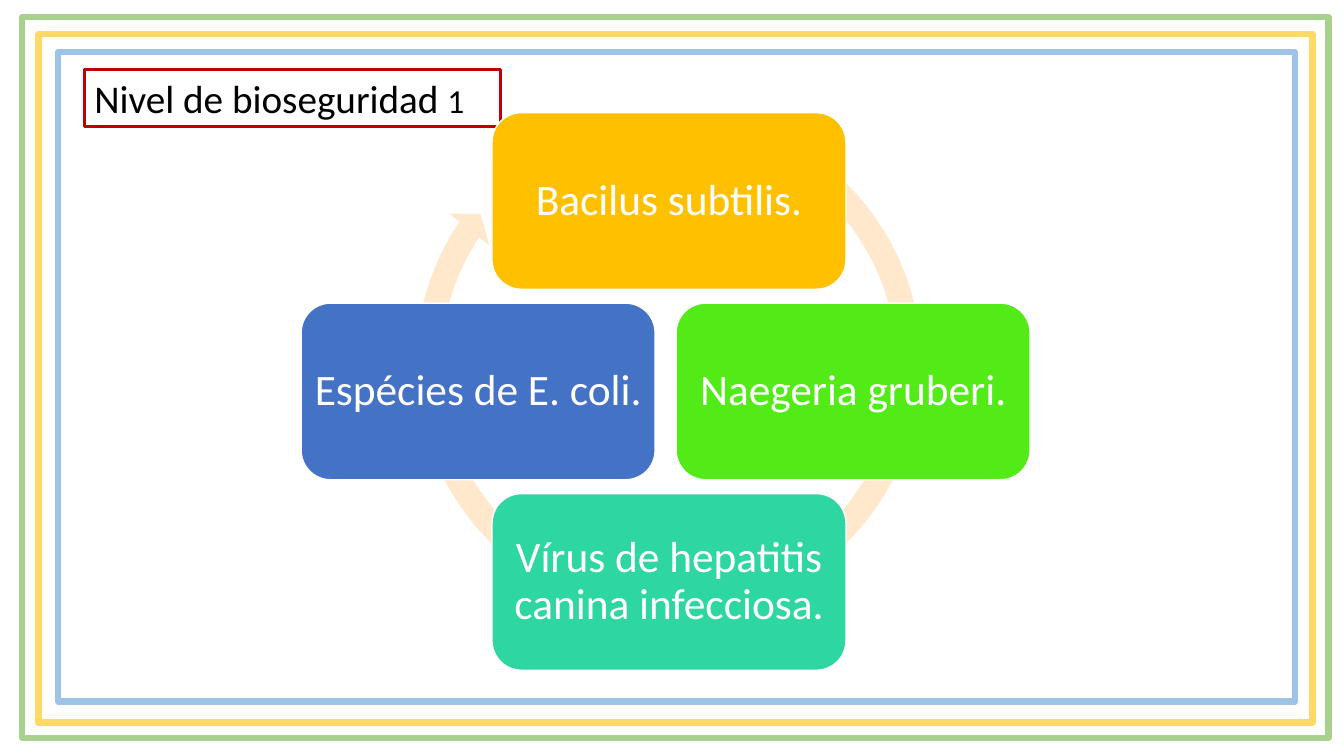
"""Build the biosafety level 1 slide: a cycle of four example organisms."""
from lxml import etree
from pptx import Presentation
from pptx import util as u
from pptx.dml.color import RGBColor
from pptx.enum import shapes, text

COLORS = {
    "outer": "A9D18E", "middle": "FFD966", "inner": "9DC3E6",
    "title_border": "C00000", "black": "000000", "white": "FFFFFF",
    "cycle": "FFE8CC", "amber": "FFC000", "green": "53EB17",
    "teal": "2ED7A1", "blue": "4472C4",
}


def add_block(kind, box, fill=None, line=None, line_width=1):
    """Add a preset shape with the given box in centimetres."""
    block = slide.shapes.add_shape(kind, *[u.Cm(length) for length in box])
    block.shadow.inherit = False
    if fill:
        block.fill.solid()
        block.fill.fore_color.rgb = RGBColor.from_string(COLORS[fill])
    else:
        block.fill.background()
    if line:
        block.line.color.rgb = RGBColor.from_string(COLORS[line])
        block.line.width = u.Pt(line_width)
    else:
        block.line.fill.background()
    return block


def style_font(paragraph, size, color):
    """Set the font shared by all runs of a paragraph."""
    paragraph.font.name = "Calibri"
    paragraph.font.size = u.Pt(size)
    paragraph.font.color.rgb = RGBColor.from_string(COLORS[color])


deck = Presentation()
deck.slide_width, deck.slide_height = u.Cm(33.87), u.Cm(19.05)
slide = deck.slides.add_slide(deck.slide_layouts[6])

frames = [
    ("outer", (0.56, 0.43, 32.92, 18.16)),
    ("middle", (0.97, 0.86, 32.11, 17.35)),
    ("inner", (1.47, 1.32, 31.17, 16.36)),
]
for color, box in frames:
    add_block(shapes.MSO_SHAPE.RECTANGLE, box, line=color, line_width=4.5)

title = add_block(shapes.MSO_SHAPE.RECTANGLE, (2.13, 1.75, 10.49, 1.45),
                  line="title_border", line_width=2.25)
title.text_frame.vertical_anchor = text.MSO_ANCHOR.TOP
heading = title.text_frame.paragraphs[0]
heading.alignment = text.PP_ALIGN.LEFT
style_font(heading, 28, "black")
heading.add_run().text = "Nivel de bioseguridad "
level = heading.add_run()
level.text = "1"
level.font.size = u.Pt(24)

cycle = add_block(shapes.MSO_SHAPE.CIRCULAR_ARROW, (10.16, 2.46, 13.39, 13.39), fill="cycle")
for index, value in enumerate((0.047, 2.729, 128.315, 180.308, 0.048)):
    cycle.adjustments[index] = value

CARD_WIDTH, CARD_HEIGHT = 8.92, 4.45
FIRST_TOP, ROW_STEP = 2.84, 4.8
organisms = [
    ("Bacilus subtilis.", 12.4, 0, "amber"),
    ("Naegeria gruberi.", 17.04, 1, "green"),
    ("Vírus de hepatitis canina infecciosa.", 12.4, 2, "teal"),
    ("Espécies de E. coli.", 7.59, 1, "blue"),
]
for name, left, row, color in organisms:
    card = add_block(shapes.MSO_SHAPE.ROUNDED_RECTANGLE,
                     (left, FIRST_TOP + row * ROW_STEP, CARD_WIDTH, CARD_HEIGHT),
                     fill=color, line="white")
    frame = card.text_frame
    frame.word_wrap = True
    frame.vertical_anchor = text.MSO_ANCHOR.MIDDLE
    frame.margin_left = frame.margin_right = u.Cm(0.1)
    frame.margin_top = frame.margin_bottom = u.Cm(0.1)
    label = frame.paragraphs[0]
    label.text = name
    label.alignment = text.PP_ALIGN.CENTER
    label.line_spacing = 0.9
    style_font(label, 31, "white")

deck.save("out.pptx")
